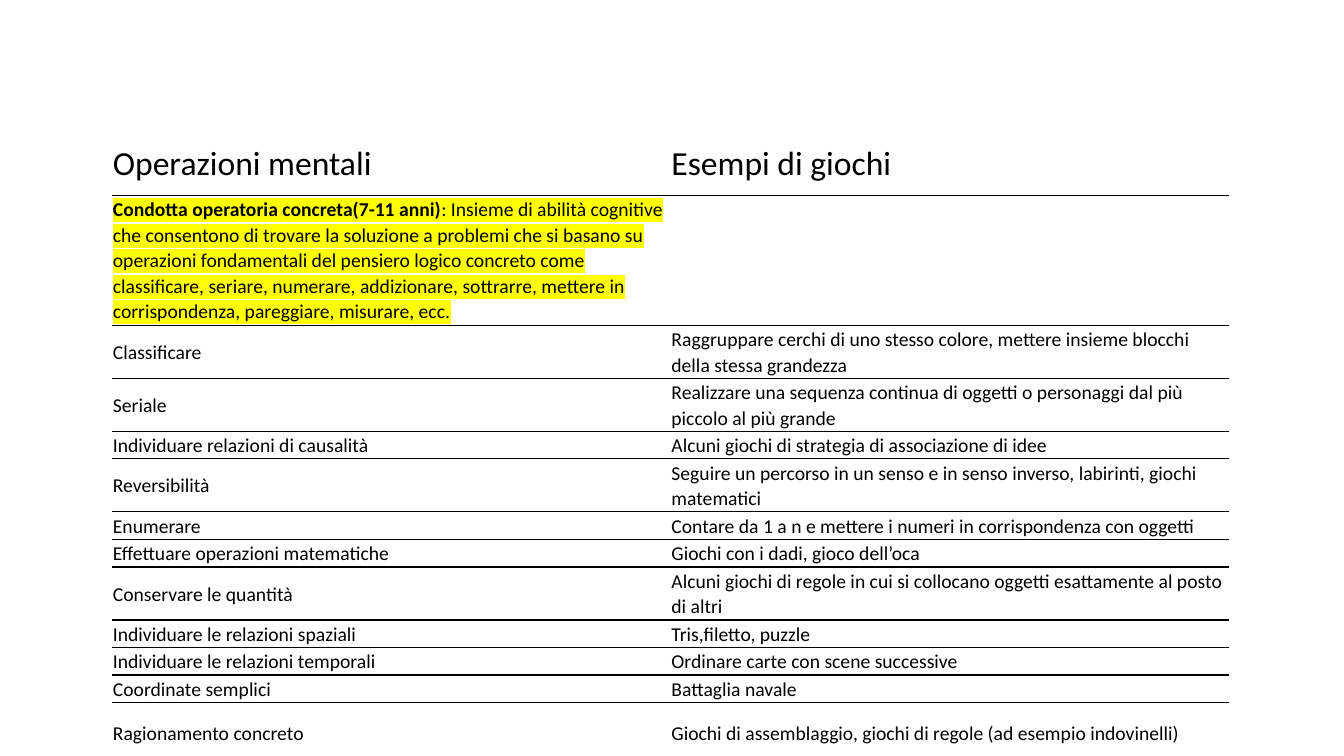
"""Builds a slide with a two-column table of mental operations and matching games."""
from lxml.etree import SubElement
from pptx import Presentation
from pptx.dml.color import RGBColor as Color
from pptx.enum.text import MSO_ANCHOR as Anchor
from pptx.oxml import parse_xml
from pptx.oxml.ns import qn
from pptx.util import Inches, Pt

COLORS = {"ink": "000000", "marker": "FFFF00"}
NAMESPACE = "http://schemas.openxmlformats.org/drawingml/2006/main"
NO_STYLE = "{2D5ABB26-0587-4C30-8999-92F81FD0307C}"
COLUMN_WIDTH = 5.54
HEADER_HEIGHT, INTRO_HEIGHT, ROW_HEIGHT, LAST_HEIGHT = 0.66, 0.99, 0.26, 0.61

INTRO_TITLE = "Condotta operatoria concreta(7-11 anni)"
INTRO_TEXT = (
    ": Insieme di abilità cognitive che consentono di trovare la soluzione a problemi "
    "che si basano su operazioni fondamentali del pensiero logico concreto come "
    "classificare, seriare, numerare, addizionare, sottrarre, mettere in corrispondenza, "
    "pareggiare, misurare, ecc."
)
HEADERS = ("Operazioni mentali", "Esempi di giochi")
GAMES = [
    ("Classificare",
     "Raggruppare cerchi di uno stesso colore, mettere insieme blocchi della stessa grandezza"),
    ("Seriale",
     "Realizzare una sequenza continua di oggetti o personaggi dal più piccolo al più grande"),
    ("Individuare relazioni di causalità", "Alcuni giochi di strategia di associazione di idee"),
    ("Reversibilità",
     "Seguire un percorso in un senso e in senso inverso, labirinti, giochi matematici"),
    ("Enumerare", "Contare da 1 a n e mettere i numeri in corrispondenza con oggetti"),
    ("Effettuare operazioni matematiche", "Giochi con i dadi, gioco dell’oca"),
    ("Conservare le quantità",
     "Alcuni giochi di regole in cui si collocano oggetti esattamente al posto di altri"),
    ("Individuare le relazioni spaziali", "Tris,filetto, puzzle"),
    ("Individuare le relazioni temporali", "Ordinare carte con scene successive"),
    ("Coordinate semplici", "Battaglia navale"),
    ("Ragionamento concreto",
     "Giochi di assemblaggio, giochi di regole (ad esempio indovinelli)"),
]


def add_text(para, text, size=14, bold=False, marker=None):
    para.line_spacing, para.space_after = 1.07, Pt(8)
    span = para.add_run()
    span.text = text
    font = span.font
    font.name, font.size, font.bold = "Calibri", Pt(size), bold
    font.color.rgb = Color.from_string(COLORS["ink"])
    if marker:
        highlight = SubElement(span._r.rPr, qn("a:highlight"))
        SubElement(highlight, qn("a:srgbClr"), val=marker)
        span._r.rPr.find(qn("a:solidFill")).addnext(highlight)


deck = Presentation()
deck.slide_width, deck.slide_height = Inches(13.33), Inches(7.5)
page = deck.slides.add_slide(deck.slide_layouts[6])

heights = [HEADER_HEIGHT, INTRO_HEIGHT] + [ROW_HEIGHT] * (len(GAMES) - 1) + [LAST_HEIGHT]
frame = page.shapes.add_table(
    len(heights), len(HEADERS), Inches(1.11), Inches(1.28),
    Inches(COLUMN_WIDTH * len(HEADERS)), Inches(sum(heights)))
table = frame.table
table.first_row = table.horz_banding = False
table._tbl.tblPr.find(qn("a:tableStyleId")).text = NO_STYLE

for column in table.columns:
    column.width = Inches(COLUMN_WIDTH)
for row, height in zip(table.rows, heights):
    row.height = Inches(height)

for cell in table.iter_cells():
    cell.margin_left = cell.margin_right = cell.margin_top = cell.margin_bottom = Inches(0.01)
    cell.vertical_anchor = Anchor.MIDDLE
    cell.fill.background()
    cell._tc.tcPr.insert(0, parse_xml(
        f'<a:lnB xmlns:a="{NAMESPACE}" w="{Pt(1)}"><a:solidFill>'
        f'<a:srgbClr val="{COLORS["ink"]}"/></a:solidFill></a:lnB>'))

for column, header in enumerate(HEADERS):
    add_text(table.cell(0, column).text_frame.paragraphs[0], header, size=24)

intro = table.cell(1, 0).text_frame.paragraphs[0]
add_text(intro, INTRO_TITLE, bold=True, marker=COLORS["marker"])
add_text(intro, INTRO_TEXT, marker=COLORS["marker"])

for row, texts in enumerate(GAMES, start=2):
    for column, text in enumerate(texts):
        add_text(table.cell(row, column).text_frame.paragraphs[0], text)

deck.save("out.pptx")
